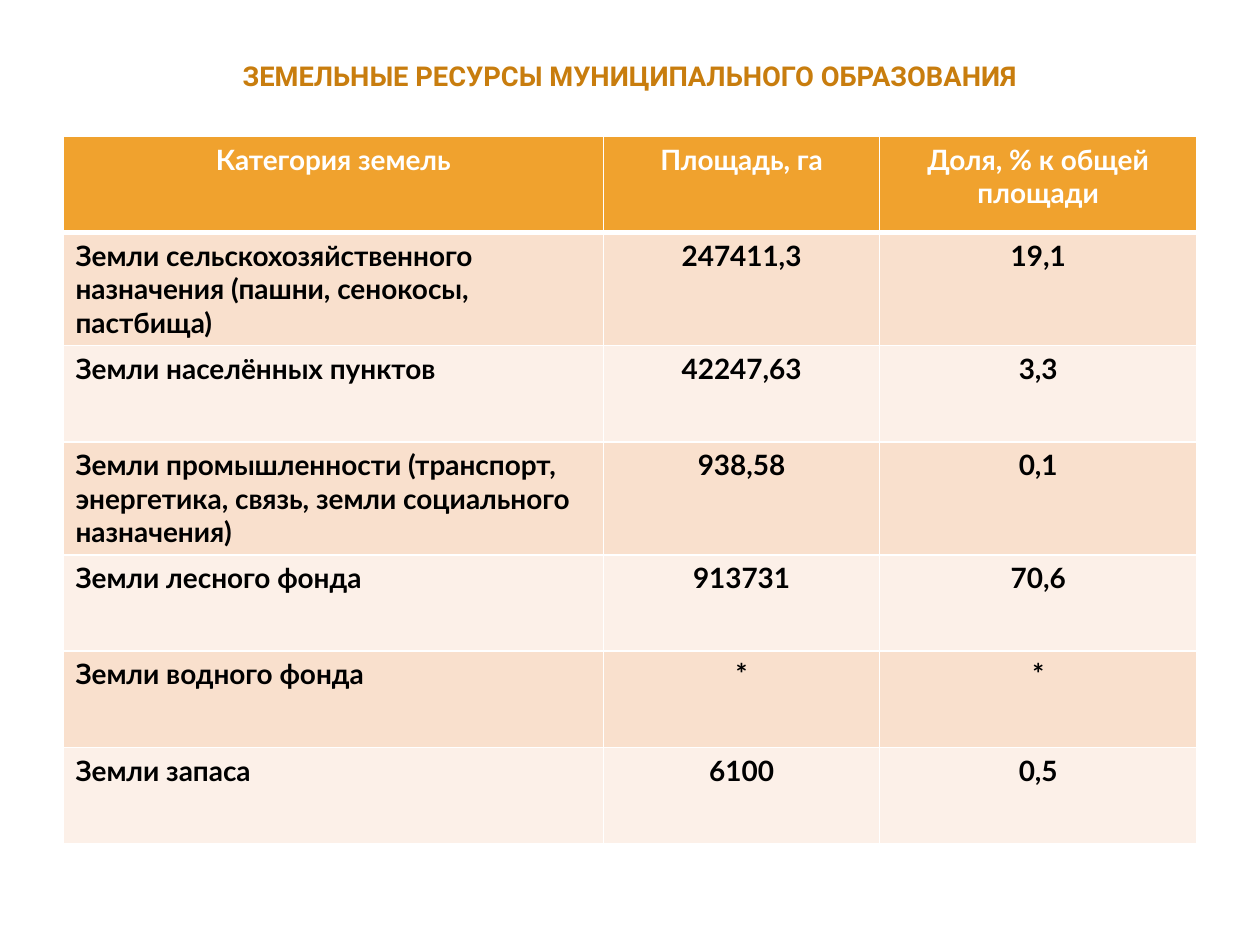
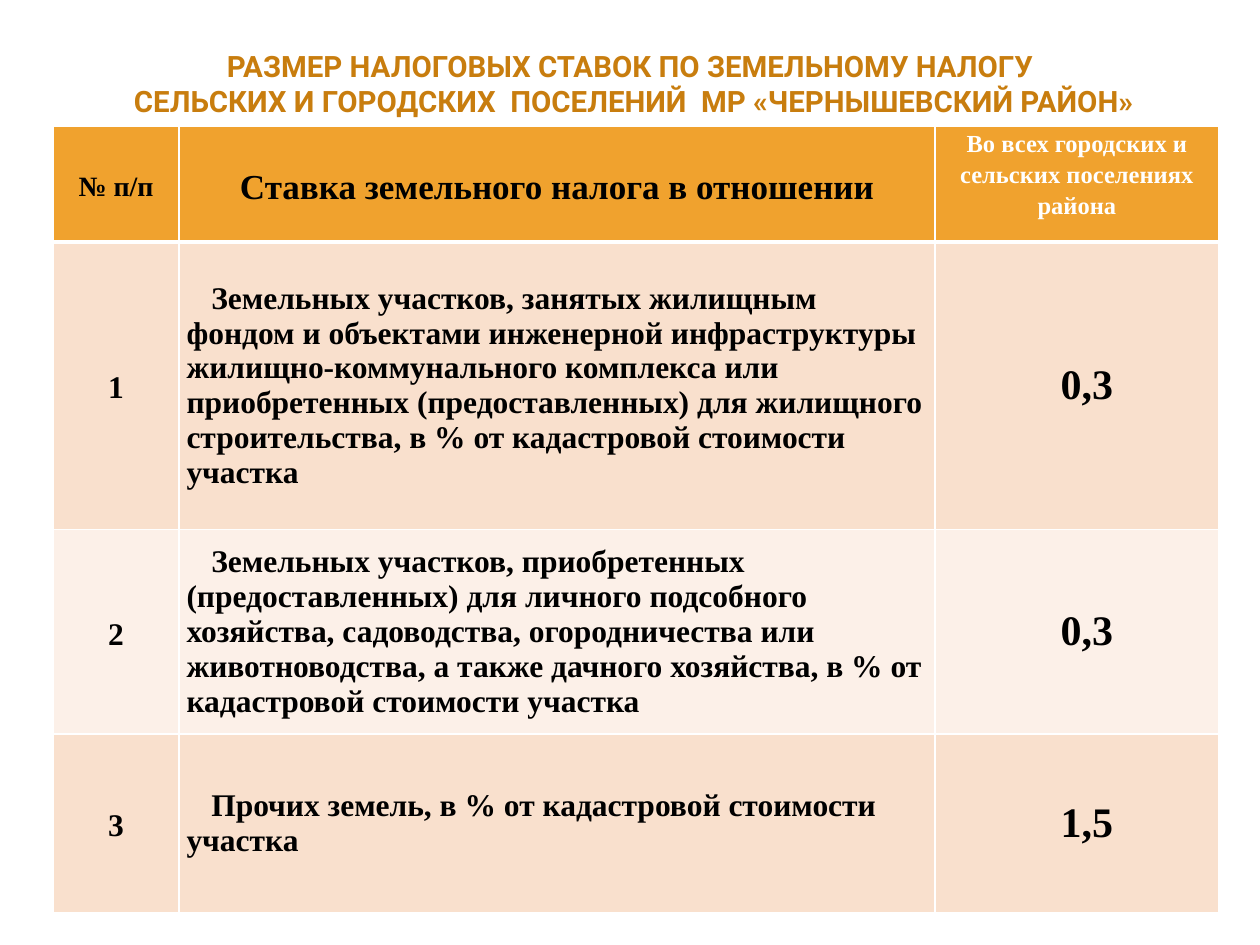
import pptx
import pptx.util
from pptx.dml.color import RGBColor
from pptx.enum.text import MSO_ANCHOR, MSO_AUTO_SIZE, PP_ALIGN
from pptx.oxml import parse_xml
from pptx.oxml.ns import nsdecls
from pptx.util import Cm

GOLD = RGBColor(0xC8, 0x7D, 0x0E)
AMBER = RGBColor(0xF0, 0xA2, 0x2E)
PEACH = RGBColor(0xF9, 0xE0, 0xCD)
CREAM = RGBColor(0xFC, 0xF0, 0xE8)
WHITE = RGBColor(0xFF, 0xFF, 0xFF)
BLACK = RGBColor(0, 0, 0)


def add_page(title, size, top, place, widths, heights):
    """Add a slide with a title and a banded table; return the table."""
    slide = deck.slides.add_slide(deck.slide_layouts[5])
    head = slide.shapes.title
    head.left, head.top, head.width, head.height = Cm(1.27), Cm(top), Cm(22.86), Cm(1.47)
    frame = head.text_frame
    frame.text = title
    frame.word_wrap = True
    frame.auto_size = MSO_AUTO_SIZE.NONE
    frame.vertical_anchor = MSO_ANCHOR.TOP
    for para in frame.paragraphs:
        para.alignment = PP_ALIGN.CENTER
        para.font.name, para.font.size = "Roboto", pptx.util.Pt(size)
        para.font.bold, para.font.color.rgb = True, GOLD

    left, upper = place
    table = slide.shapes.add_table(len(heights), len(widths), Cm(left), Cm(upper),
                                   Cm(sum(widths)), Cm(sum(heights))).table
    for col, width in zip(table.columns, widths):
        col.width = Cm(width)
    for row, height in zip(table.rows, heights):
        row.height = Cm(height)
    for r, row in enumerate(table.rows):
        for cell in row.cells:
            cell.fill.solid()
            cell.fill.fore_color.rgb = AMBER if r == 0 else (CREAM, PEACH)[r % 2]
            # The rule below the header row is thicker than the rest
            lines = {"L": 1, "R": 1, "T": 3 if r == 1 else 1, "B": 3 if r == 0 else 1}
            for spot, (side, points) in enumerate(lines.items()):
                cell._tc.get_or_add_tcPr().insert(spot, parse_xml(
                    f'<a:ln{side} {nsdecls("a")} w="{pptx.util.Pt(points)}"><a:solidFill>'
                    f'<a:srgbClr val="{WHITE}"/></a:solidFill></a:ln{side}>'))
    return table


def write(cell, text, font, size, color, align):
    """Put bold text in a cell; return its paragraph."""
    cell.text = text
    para = cell.text_frame.paragraphs[0]
    para.alignment = align
    para.font.name, para.font.size = font, pptx.util.Pt(size)
    para.font.bold, para.font.italic = True, False
    para.font.color.rgb = color
    return para


deck = pptx.Presentation()
deck.slide_width, deck.slide_height = Cm(25.4), Cm(19.05)

# Land resources
lands = [
    ("Категория земель", "Площадь, га", "Доля, % к общей площади"),
    ("Земли сельскохозяйственного назначения (пашни, сенокосы, пастбища)", "247411,3", "19,1"),
    ("Земли населённых пунктов", "42247,63", "3,3"),
    ("Земли промышленности (транспорт, энергетика, связь, земли социального назначения)",
     "938,58", "0,1"),
    ("Земли лесного фонда", "913731", "70,6"),
    ("Земли водного фонда", "*", "*"),
    ("Земли запаса", "6100", "0,5"),
]
table = add_page("ЗЕМЕЛЬНЫЕ РЕСУРСЫ МУНИЦИПАЛЬНОГО ОБРАЗОВАНИЯ", 15.6, 1.07,
                 (1.27, 2.75), (10.9, 5.56, 6.4), [1.94] * len(lands))
for r, land in enumerate(lands):
    for c, text in enumerate(land):
        align = PP_ALIGN.LEFT if r and c == 0 else PP_ALIGN.CENTER
        write(table.cell(r, c), text, "Lato", 16, BLACK if r else WHITE, align)

# Land tax rates
rates = [
    ("№ п/п", "Ставка земельного налога в отношении",
     "Во всех городских и сельских поселениях района"),
    ("1", "Земельных участков, занятых жилищным фондом и объектами инженерной "
     "инфраструктуры жилищно-коммунального комплекса или приобретенных (предоставленных) "
     "для жилищного строительства, в % от кадастровой стоимости участка", "0,3"),
    ("2", "Земельных участков, приобретенных (предоставленных) для личного подсобного "
     "хозяйства, садоводства, огородничества или животноводства, а также дачного "
     "хозяйства, в % от кадастровой стоимости участка", "0,3"),
    ("3", "Прочих земель, в % от кадастровой стоимости участка", "1,5"),
]
table = add_page("РАЗМЕР НАЛОГОВЫХ СТАВОК ПО ЗЕМЕЛЬНОМУ НАЛОГУ\n"
                 " СЕЛЬСКИХ И ГОРОДСКИХ  ПОСЕЛЕНИЙ  МР «ЧЕРНЫШЕВСКИЙ РАЙОН»", 16.8, 0.84,
                 (1.07, 2.55), (2.54, 15.24, 5.72), (2.33, 5.79, 4.13, 3.6))
for r, rate in enumerate(rates):
    sizes = (18, 18, 24) if r else (16, 20, 14)
    for c, text in enumerate(rate):
        cell = table.cell(r, c)
        corner = r == 0 and c == 2
        align = PP_ALIGN.LEFT if r and c == 1 else PP_ALIGN.CENTER
        para = write(cell, text, "Times New Roman", sizes[c],
                     WHITE if corner else BLACK, align)
        cell.margin_left = cell.margin_right = Cm(0.15)
        cell.margin_top = cell.margin_bottom = 0
        cell.vertical_anchor = MSO_ANCHOR.TOP if corner else MSO_ANCHOR.MIDDLE
        if r == 0 or c == 0:
            para.line_spacing = 1.15
        else:
            props = para._p.get_or_add_pPr()
            props.set("marL", "0")
            props.set("indent", str(Cm((0.5, 0.4)[c - 1])))

deck.save("out.pptx")
